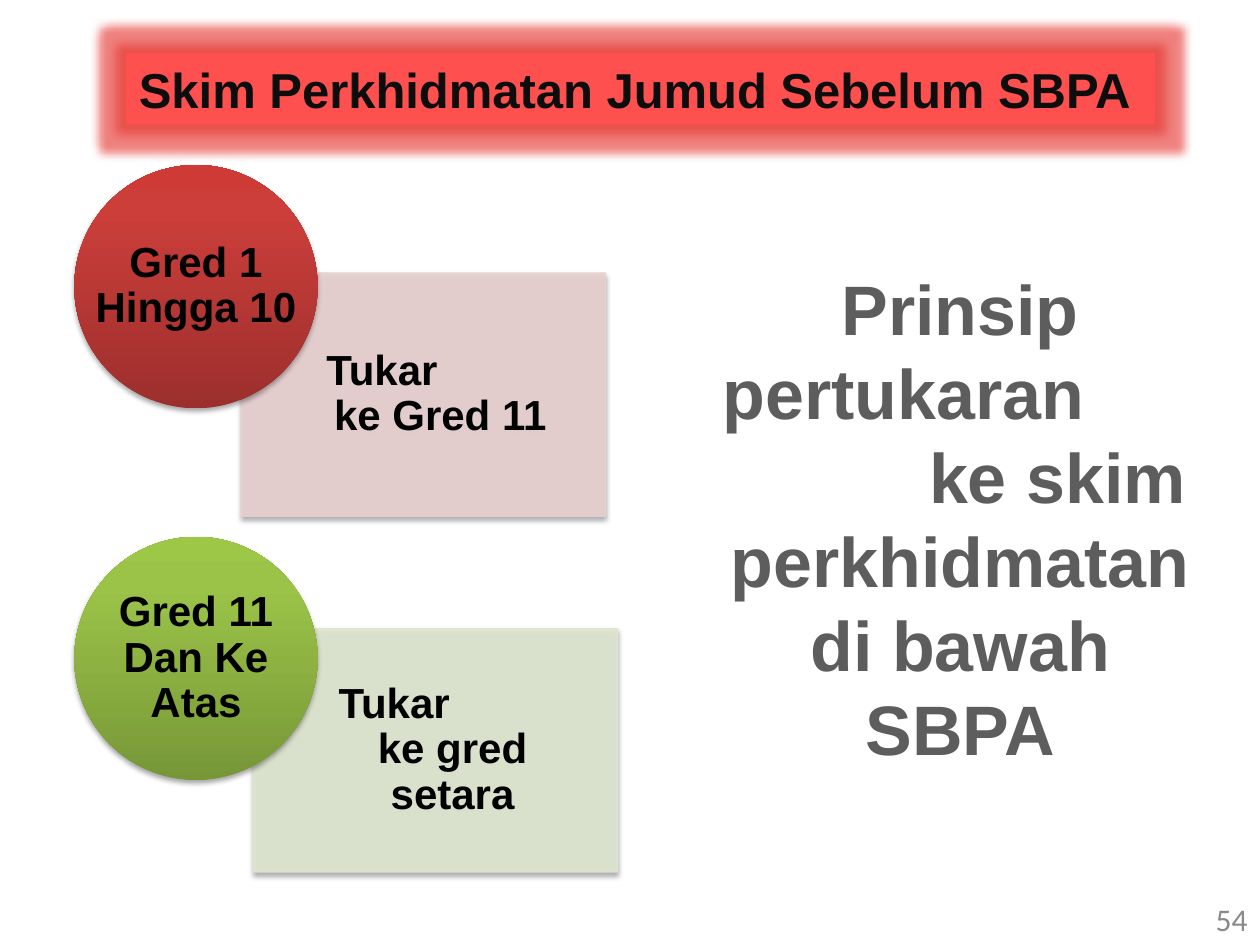
from lxml.etree import SubElement
from pptx import Presentation
from pptx.dml.color import RGBColor
from pptx.enum.shapes import MSO_SHAPE as Shape
from pptx.enum.text import MSO_ANCHOR as Anchor, PP_ALIGN as Align
from pptx.oxml.ns import qn
from pptx.util import Pt

BLACK = RGBColor(0x00, 0x00, 0x00)
TITLE_TEXT = RGBColor(0x0D, 0x0D, 0x0D)
TITLE_FILL = RGBColor(0xFF, 0x50, 0x50)
TITLE_GLOW = RGBColor(0xE5, 0x30, 0x2A)
PRINCIPLE_TEXT = RGBColor(0x5D, 0x5D, 0x5D)
NUMBER_TEXT = RGBColor(0x89, 0x89, 0x89)
PINK = RGBColor(0xE8, 0xD0, 0xD0)
PALE_GREEN = RGBColor(0xDE, 0xE7, 0xD1)
REDS = ((0, RGBColor(0x9C, 0x2F, 0x2D)), (80, RGBColor(0xCB, 0x3E, 0x3A)),
        (100, RGBColor(0xCE, 0x3B, 0x37)))
GREENS = ((0, RGBColor(0x77, 0x97, 0x37)), (80, RGBColor(0x9B, 0xC3, 0x48)),
          (100, RGBColor(0x9D, 0xC7, 0x46)))

CIRCLE_LEFT, DIAMETER = 42.5, 139
CARD_WIDTH, CARD_HEIGHT = 208, 139


def add_color(parent, color, alpha=100):
    element = SubElement(parent, qn("a:srgbClr"), val=str(color))
    if alpha < 100:
        SubElement(element, qn("a:alpha"), val=str(alpha * 1000))


def add_effect(shape, name, color, alpha, **settings):
    effects = shape.element.spPr.find(qn("a:effectLst"))
    effect = SubElement(effects, qn(name), **settings)
    add_color(effect, color, alpha)


def add_shadow(shape):
    add_effect(shape, "a:outerShdw", BLACK, 35, blurRad=str(Pt(3.1)),
               dist=str(Pt(1.8)), dir="5400000", rotWithShape="0")


def set_alpha(fill_element, alpha):
    color = fill_element.find(".//" + qn("a:srgbClr"))
    SubElement(color, qn("a:alpha"), val=str(alpha * 1000))


def add_plain_shape(page, kind, left, top, width, height):
    shape = page.shapes.add_shape(kind, Pt(left), Pt(top), Pt(width), Pt(height))
    shape.shadow.inherit = False
    shape.line.fill.background()
    return shape


def add_box(page, left, top, width, height):
    return page.shapes.add_textbox(Pt(left), Pt(top), Pt(width), Pt(height))


def set_margins(frame, left, others):
    frame.margin_left = Pt(left)
    frame.margin_top = frame.margin_right = frame.margin_bottom = Pt(others)


def write(shape, lines, size, color, spacing=1.0, anchor=Anchor.TOP,
          align=Align.CENTER, font="Arial", bold=True):
    """Write (text, indent) lines; an indent of None keeps the alignment."""
    frame = shape.text_frame
    frame.word_wrap = True
    frame.vertical_anchor = anchor
    frame.text = "\n".join(text for text, indent in lines)
    for para, (text, indent) in zip(frame.paragraphs, lines):
        para.alignment = align
        para.line_spacing = spacing
        if indent is not None:
            para.alignment = Align.LEFT
            para._p.get_or_add_pPr().set("marL", str(Pt(indent)))
        for span in para.runs:
            span.font.name = font
            span.font.size = Pt(size)
            span.font.bold = bold
            span.font.color.rgb = color


def add_title(page, text):
    title = add_plain_shape(page, Shape.RECTANGLE, 72, 30.2, 588, 41)
    title.fill.solid()
    title.fill.fore_color.rgb = TITLE_FILL
    add_effect(title, "a:glow", TITLE_GLOW, 60, rad=str(Pt(11)))
    write(title, [(text, None)], 28, TITLE_TEXT, anchor=Anchor.MIDDLE)


def add_card(page, left, top, color, lines):
    card = add_plain_shape(page, Shape.RECTANGLE, left, top, CARD_WIDTH, CARD_HEIGHT)
    card.fill.solid()
    card.fill.fore_color.rgb = color
    card.line.color.rgb = color
    card.line.width = Pt(0.75)
    properties = card.element.spPr
    set_alpha(properties.find(qn("a:solidFill")), 90)
    set_alpha(properties.find(qn("a:ln")), 90)
    add_shadow(card)
    set_margins(card.text_frame, 33, 13.7)
    write(card, lines, 24, BLACK, 0.9, Anchor.MIDDLE)


def add_circle(page, top, stops, text):
    place = (CIRCLE_LEFT, top, DIAMETER, DIAMETER)
    circle = add_plain_shape(page, Shape.OVAL, *place)
    circle.fill.gradient()
    circle.fill.gradient_angle = 90
    stop_list = circle.element.spPr.find(".//" + qn("a:gsLst"))
    stop_list.clear()
    for position, color in stops:
        add_color(SubElement(stop_list, qn("a:gs"), pos=str(position * 1000)), color)
    add_shadow(circle)

    # A separate box lets the words run wider than the circle's text area.
    label = add_box(page, *place)
    set_margins(label.text_frame, 0, 0)
    write(label, [(text, None)], 24, BLACK, 0.9, Anchor.MIDDLE)


def main():
    deck = Presentation()
    deck.slide_width, deck.slide_height = Pt(720), Pt(540)
    page = deck.slides.add_slide(deck.slide_layouts[6])

    principle = add_box(page, 401.8, 148, 293.8, 298)
    write(principle, [("Prinsip", None), ("pertukaran", 4), ("ke skim", 122),
                      ("perkhidmatan di bawah SBPA", None)],
          40, PRINCIPLE_TEXT, Pt(48))
    add_title(page, "Skim Perkhidmatan Jumud Sebelum SBPA ")
    number = add_box(page, 552, 511, 168, 29)
    write(number, [("54", None)], 18, NUMBER_TEXT, align=Align.RIGHT,
          font="Calibri", bold=False)

    add_card(page, 138, 156, PINK, [("Tukar", 15.5), ("ke Gred 11", None)])
    add_circle(page, 94.3, REDS, "Gred 1 Hingga 10")
    add_card(page, 145, 359.3, PALE_GREEN, [("Tukar", 15.5), ("ke gred\vsetara", None)])
    add_circle(page, 306.8, GREENS, "Gred 11 Dan Ke Atas")

    deck.save("out.pptx")


if __name__ == "__main__":
    main()
